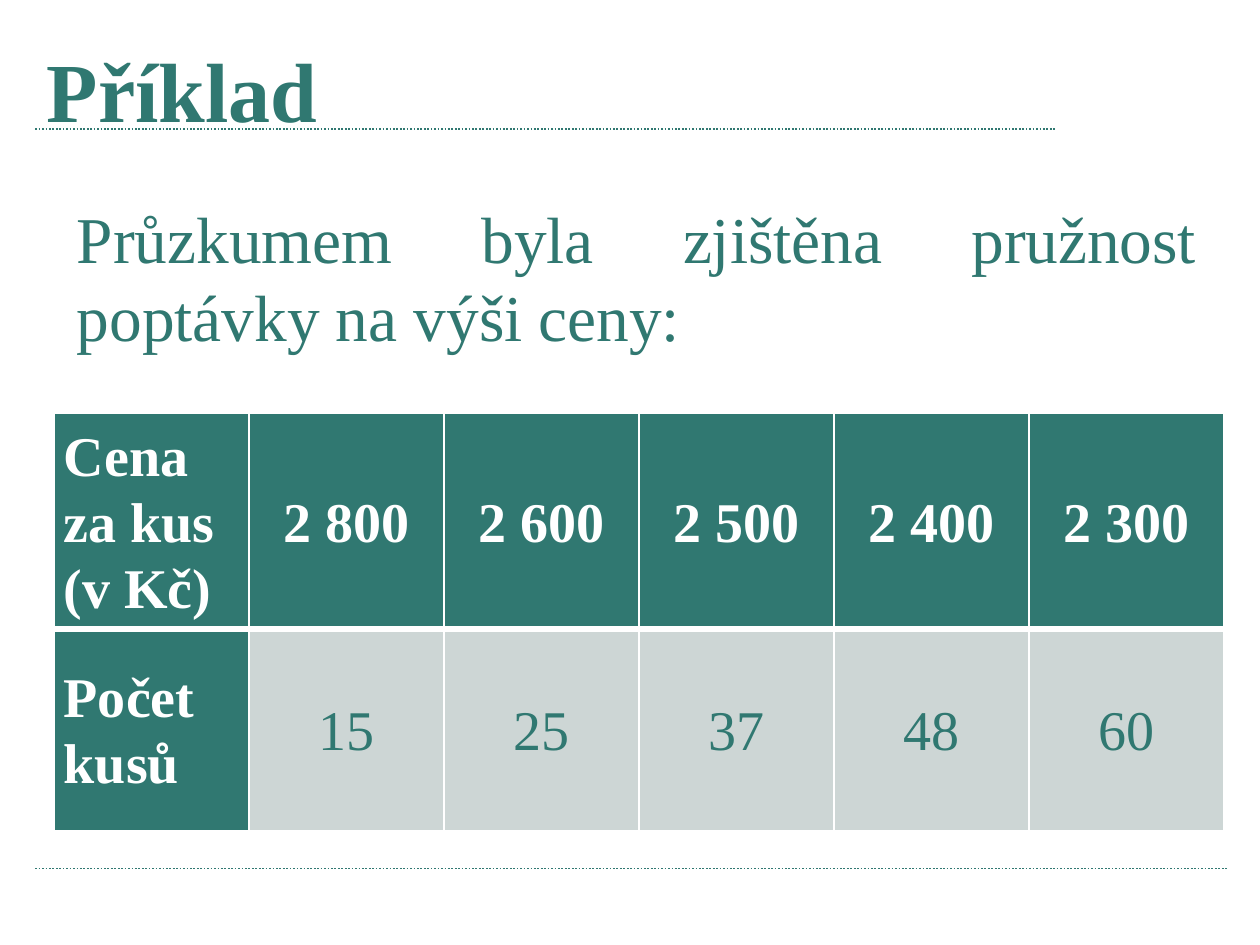
from dataclasses import dataclass
from typing import NamedTuple

from lxml.etree import SubElement
from pptx import Presentation
from pptx.dml.color import RGBColor as Rgb
from pptx.enum.dml import MSO_LINE_DASH_STYLE as Dash
from pptx.enum.shapes import MSO_CONNECTOR as Connector
from pptx.enum.text import MSO_ANCHOR as Anchor, PP_ALIGN as Align
from pptx.oxml.ns import qn
from pptx.util import Inches, Pt

COLUMNS = 750
SLIDE_WIDTH = Inches(7.5)
SLIDE_HEIGHT = SLIDE_WIDTH * 3 // 4
UNIT = SLIDE_WIDTH // COLUMNS
ROWS = SLIDE_HEIGHT // UNIT


@dataclass(frozen=True)
class Theme:
    """Colours, font and type sizes of the deck."""
    font: str = "Times New Roman"
    teal: str = "307871"
    pale: str = "CDD6D5"
    white: str = "FFFFFF"
    title: int = 36
    body: int = 28
    cell: int = 24
    cell_spacing: float = 1.07


class Box(NamedTuple):
    """A region in grid columns and rows."""
    left: int
    top: int
    width: int
    height: int

    def lengths(self):
        """Return the region in slide lengths."""
        return [value * UNIT for value in self]


THEME = Theme()
PRICES = ["Cena za kus (v Kč)", "2 800", "2 600", "2 500", "2 400", "2 300"]
PIECES = ["Počet kusů", "15", "25", "37", "48", "60"]


def add_span(para, text, size, color, bold=False):
    """Add one styled run to a paragraph."""
    span = para.add_run()
    span.text = text
    span.font.name = THEME.font
    span.font.size = Pt(size)
    span.font.bold = bold
    span.font.color.rgb = Rgb.from_string(color)


def add_rule(page, box):
    """Draw a dotted rule along the top of the box."""
    left, top, width, _ = box.lengths()
    rule = page.shapes.add_connector(Connector.STRAIGHT, left, top, left + width, top)
    rule.line.color.rgb = Rgb.from_string(THEME.teal)
    rule.line.width = Pt(0.75)
    rule.line.dash_style = Dash.ROUND_DOT
    SubElement(rule._element.spPr, qn("a:effectLst"))


def add_text(page, box, text, size, align, bold=False):
    """Place one wrapped teal paragraph in the box."""
    frame = page.shapes.add_textbox(*box.lengths()).text_frame
    frame.word_wrap = True
    para = frame.paragraphs[0]
    para.alignment = align
    add_span(para, text, size, THEME.teal, bold)


def add_borders(cell, widths):
    """Give a cell white borders of the stated point widths."""
    properties = cell._tc.get_or_add_tcPr()
    for index, (side, width) in enumerate(widths.items()):
        border = SubElement(properties, qn(f"a:ln{side}"), w=str(Pt(width)))
        fill = SubElement(border, qn("a:solidFill"))
        SubElement(fill, qn("a:srgbClr"), val=THEME.white)
        properties.remove(border)
        properties.insert(index, border)


def fill_cell(cell, text, is_header, is_label, widths):
    """Write and style one table cell."""
    cell.fill.solid()
    cell.fill.fore_color.rgb = Rgb.from_string(THEME.teal if is_header else THEME.pale)
    cell.vertical_anchor = Anchor.MIDDLE
    cell.margin_left = cell.margin_right = Inches(0.06)
    cell.margin_top = cell.margin_bottom = 0
    para = cell.text_frame.paragraphs[0]
    para.alignment = Align.LEFT if is_label else Align.CENTER
    para.line_spacing = THEME.cell_spacing
    add_span(para, text, THEME.cell, THEME.white if is_header else THEME.teal, is_header)
    add_borders(cell, widths)


def add_demand_table(page, box, records):
    """Place the price and quantity table in the box."""
    table = page.shapes.add_table(len(records), len(records[0]), *box.lengths()).table
    for row, height in zip(table.rows, (128, 120)):
        row.height = height * UNIT
    for row_index, record in enumerate(records):
        first = row_index == 0
        widths = {"L": 1, "R": 1, "T": 1 if first else 3, "B": 3 if first else 1}
        for column_index, text in enumerate(record):
            label = column_index == 0
            cell = table.cell(row_index, column_index)
            fill_cell(cell, text, first or label, label, widths)


def build_example(page, box):
    """Lay out the worked example within the box."""
    def region(left, top, width, height):
        return Box(box.left + left, box.top + top, width, height)

    add_rule(page, region(21, 77, 608, 0))
    add_rule(page, region(21, 517, 710, 0))
    add_text(page, region(18, 18, 661, 59), "Příklad", THEME.title, Align.LEFT, True)
    add_text(page, region(36, 113, 686, 140),
             "Průzkumem byla zjištěna pružnost poptávky na výši ceny:",
             THEME.body, Align.JUSTIFY)
    add_demand_table(page, region(32, 246, 697, 248), [PRICES, PIECES])


def main():
    """Build and save the deck."""
    deck = Presentation()
    deck.slide_width = SLIDE_WIDTH
    deck.slide_height = SLIDE_HEIGHT
    page = deck.slides.add_slide(deck.slide_layouts[6])
    build_example(page, Box(0, 0, COLUMNS, ROWS))
    deck.save("out.pptx")


if __name__ == "__main__":
    main()
